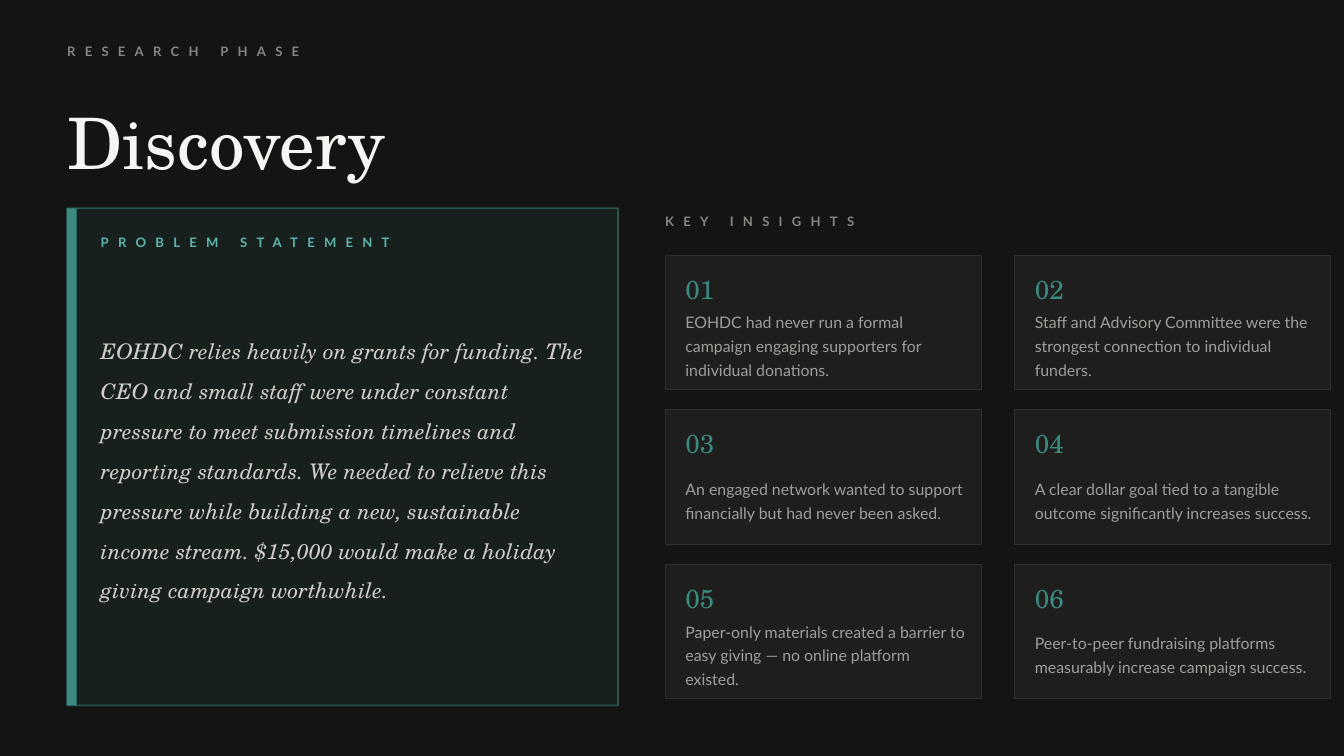
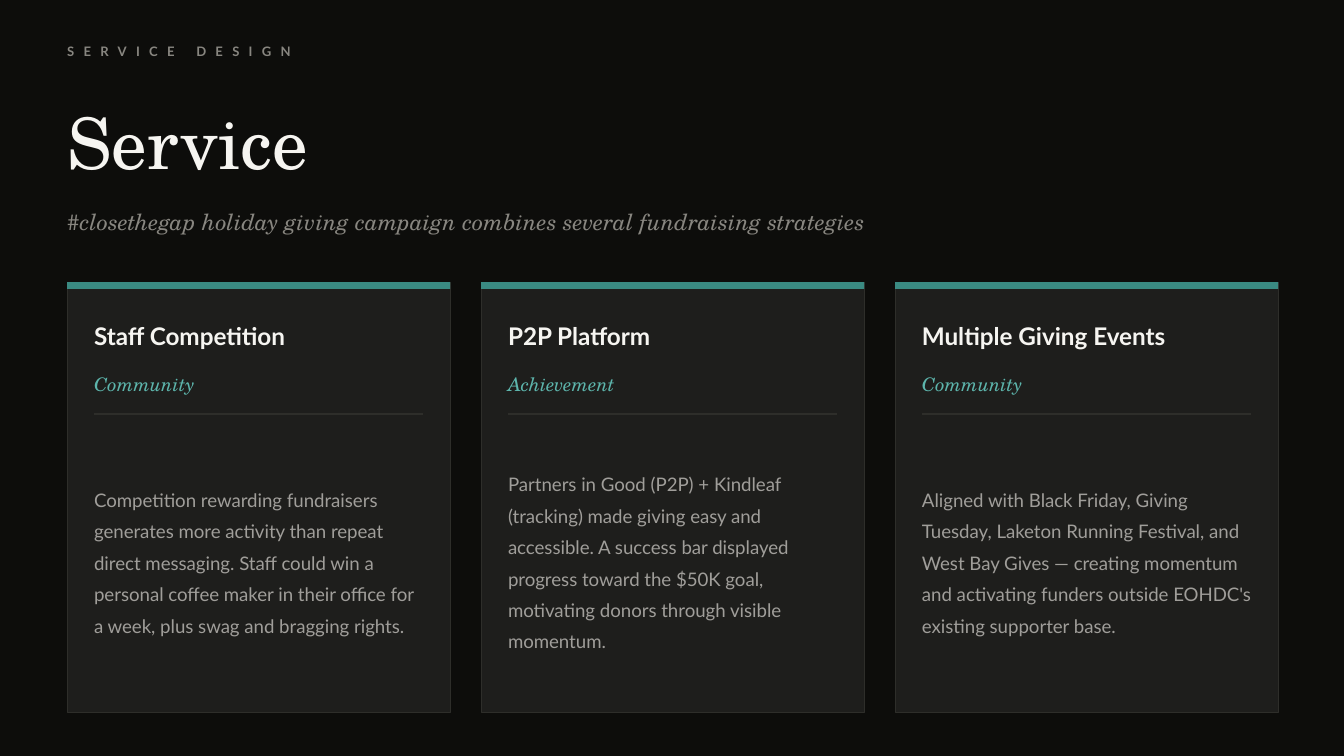
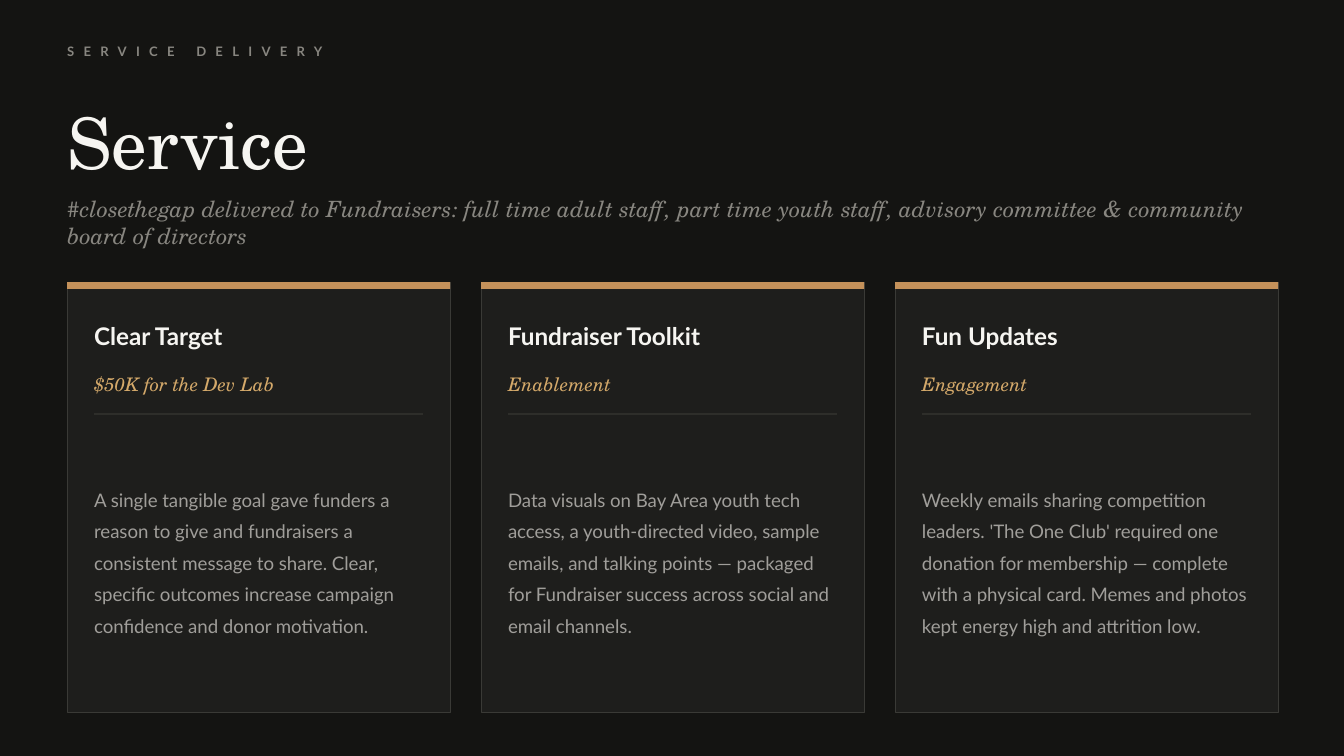
from pptx import Presentation
from pptx.dml.color import RGBColor
from pptx.enum.shapes import MSO_CONNECTOR, MSO_SHAPE
from pptx.enum.text import MSO_ANCHOR
from pptx.oxml.ns import qn
from pptx.util import Inches, Pt
from lxml import etree

RECT = MSO_SHAPE.RECTANGLE
STRAIGHT = MSO_CONNECTOR.STRAIGHT
MIDDLE = MSO_ANCHOR.MIDDLE

SANS = "Lato"
SERIF = "TeX Gyre Schola"

DARK = RGBColor(0x14, 0x14, 0x12)
BLACK = RGBColor(0x0D, 0x0D, 0x0B)
PANEL = RGBColor(0x1E, 0x1E, 0x1C)
EDGE = RGBColor(0x2E, 0x2E, 0x2A)
RIM = RGBColor(0x3A, 0x3A, 0x36)
WHITE = RGBColor(0xF6, 0xF5, 0xF1)
PALE = RGBColor(0xD0, 0xCD, 0xC8)
SILVER = RGBColor(0xA0, 0x9E, 0x9A)
GRAY = RGBColor(0x88, 0x86, 0x80)
TEAL = RGBColor(0x3A, 0x8A, 0x82)
MINT = RGBColor(0x5D, 0xB5, 0xAC)
AMBER = RGBColor(0xC4, 0x91, 0x5A)
GOLD = RGBColor(0xD4, 0xA9, 0x6A)

WIDTH = Inches(10)
HEIGHT = WIDTH * 9 // 16
LEFT = 0.5

PROBLEM = (
    "EOHDC relies heavily on grants for funding. The CEO and small staff were "
    "under constant pressure to meet submission timelines and reporting "
    "standards. We needed to relieve this pressure while building a new, "
    "sustainable income stream. $15,000 would make a holiday giving campaign "
    "worthwhile."
)

INSIGHTS = [
    "EOHDC had never run a formal campaign engaging supporters for individual donations.",
    "Staff and Advisory Committee were the strongest connection to individual funders.",
    "An engaged network wanted to support financially but had never been asked.",
    "A clear dollar goal tied to a tangible outcome significantly increases success.",
    "Paper-only materials created a barrier to easy giving — no online platform existed.",
    "Peer-to-peer fundraising platforms measurably increase campaign success.",
]

SERVICES = [
    {
        "label": "SERVICE DESIGN",
        "lead": "#closethegap holiday giving campaign combines several fundraising strategies",
        "back": BLACK, "rim": EDGE, "bar": TEAL, "tag": MINT,
        "cards": [
            ("Staff Competition", "Community",
             "Competition rewarding fundraisers generates more activity than repeat "
             "direct messaging. Staff could win a personal coffee maker in their "
             "office for a week, plus swag and bragging rights."),
            ("P2P Platform", "Achievement",
             "Partners in Good (P2P) + Kindleaf (tracking) made giving easy and "
             "accessible. A success bar displayed progress toward the $50K goal, "
             "motivating donors through visible momentum."),
            ("Multiple Giving Events", "Community",
             "Aligned with Black Friday, Giving Tuesday, Laketon Running Festival, "
             "and West Bay Gives — creating momentum and activating funders outside "
             "EOHDC's existing supporter base."),
        ],
    },
    {
        "label": "SERVICE DELIVERY",
        "lead": "#closethegap delivered to Fundraisers: full time adult staff, part time "
                "youth staff, advisory committee & community board of directors",
        "back": DARK, "rim": RIM, "bar": AMBER, "tag": GOLD,
        "cards": [
            ("Clear Target", "$50K for the Dev Lab",
             "A single tangible goal gave funders a reason to give and fundraisers a "
             "consistent message to share. Clear, specific outcomes increase campaign "
             "confidence and donor motivation."),
            ("Fundraiser Toolkit", "Enablement",
             "Data visuals on Bay Area youth tech access, a youth-directed video, "
             "sample emails, and talking points — packaged for Fundraiser success "
             "across social and email channels."),
            ("Fun Updates", "Engagement",
             "Weekly emails sharing competition leaders. 'The One Club' required one "
             "donation for membership — complete with a physical card. Memes and "
             "photos kept energy high and attrition low."),
        ],
    },
]


def add_text(slide, words, x, y, w, h, size, color, face=SANS,
             bold=False, italic=False, lead=None, track=None):
    box = slide.shapes.add_textbox(Inches(x), Inches(y), Inches(w), Inches(h))
    frame = box.text_frame
    frame.word_wrap = True
    frame.vertical_anchor = MIDDLE
    frame.margin_left = frame.margin_right = 0
    frame.margin_top = frame.margin_bottom = 0
    para = frame.paragraphs[0]
    if lead:
        para.line_spacing = lead
    run = para.add_run()
    run.text = words
    font = run.font
    font.name = face
    font.size = Pt(size)
    font.bold = bold
    font.italic = italic
    font.color.rgb = color
    if track:
        run._r.get_or_add_rPr().set("spc", str(track * 100))


def add_label(slide, words, x, y, w, color=GRAY):
    add_text(slide, words, x, y, w, 0.2, 7, color, bold=True, track=5)


def add_rect(slide, x, y, w, h, fill, edge=None, width=0.5):
    rect = slide.shapes.add_shape(RECT, Inches(x), Inches(y), Inches(w), Inches(h))
    rect.shadow.inherit = False
    rect.fill.solid()
    rect.fill.fore_color.rgb = fill
    if edge is None:
        rect.line.fill.background()
    else:
        rect.line.color.rgb = edge
        rect.line.width = Pt(width)
    return rect


def add_rule(slide, x, y, w):
    rule = slide.shapes.add_connector(
        STRAIGHT, Inches(x), Inches(y), Inches(x + w), Inches(y))
    rule.line.color.rgb = EDGE
    rule.line.width = Pt(0.75)
    etree.SubElement(rule._element.spPr, qn("a:effectLst"))


def set_alpha(part, share):
    tone = next(part.iter(qn("a:srgbClr")))
    etree.SubElement(tone, qn("a:alpha")).set("val", str(share * 1000))


def add_slide(deck, label, title, back):
    slide = deck.slides.add_slide(deck.slide_layouts[6])
    slide.background.fill.solid()
    slide.background.fill.fore_color.rgb = back
    add_label(slide, label, LEFT, 0.28, 6)
    add_text(slide, title, LEFT, 0.45, 5, 1.2, 38, WHITE, SERIF)
    return slide


def add_insight(slide, index, words):
    row, col = divmod(index, 2)
    x, y = 4.95 + col * 2.6, 1.9 + row * 1.15
    add_rect(slide, x, y, 2.35, 1, PANEL, EDGE)
    add_text(slide, f"{index + 1:02}", x + 0.15, y + 0.1, 0.4, 0.3, 14, TEAL, SERIF)
    add_text(slide, words, x + 0.15, y + 0.38, 2.1, 0.56, 8.5, SILVER, lead=1.25)


def add_discovery(deck):
    slide = add_slide(deck, "RESEARCH PHASE", "Discovery", DARK)
    top, high = 1.55, 3.7
    panel = add_rect(slide, LEFT, top, 4.1, high, TEAL, TEAL, 1)
    set_alpha(panel._element.spPr.find(qn("a:solidFill")), 10)
    set_alpha(panel._element.spPr.find(qn("a:ln")), 50)
    add_rect(slide, LEFT, top, 0.07, high, TEAL)
    add_label(slide, "PROBLEM STATEMENT", 0.75, 1.7, 3.5, MINT)
    add_text(slide, PROBLEM, 0.75, 2, 3.6, 2.9, 11.5, PALE, SERIF,
             italic=True, lead=1.55)
    add_label(slide, "KEY INSIGHTS", 4.95, top, 4.8)
    for index, words in enumerate(INSIGHTS):
        add_insight(slide, index, words)


def add_service(deck, data):
    slide = add_slide(deck, data["label"], "Service", data["back"])
    add_text(slide, data["lead"], LEFT, 1.45, 8.8, 0.4, 12, GRAY, SERIF, italic=True)
    top, wide, pad = 2.1, 2.85, 0.2
    span = wide - 2 * pad
    for index, (name, tag, words) in enumerate(data["cards"]):
        x = LEFT + index * 3.08
        inner = x + pad
        add_rect(slide, x, top, wide, 3.2, PANEL, data["rim"])
        add_rect(slide, x, top, wide, 0.05, data["bar"])
        add_text(slide, name, inner, 2.32, span, 0.35, 13, WHITE, bold=True)
        add_text(slide, tag, inner, 2.72, span, 0.28, 10, data["tag"], SERIF, italic=True)
        add_rule(slide, inner, 3.08, span)
        add_text(slide, words, inner, 3.18, span, 1.95, 10, SILVER, lead=1.4)


def main():
    deck = Presentation()
    deck.slide_width = WIDTH
    deck.slide_height = HEIGHT
    add_discovery(deck)
    for data in SERVICES:
        add_service(deck, data)
    deck.save("out.pptx")


if __name__ == "__main__":
    main()
